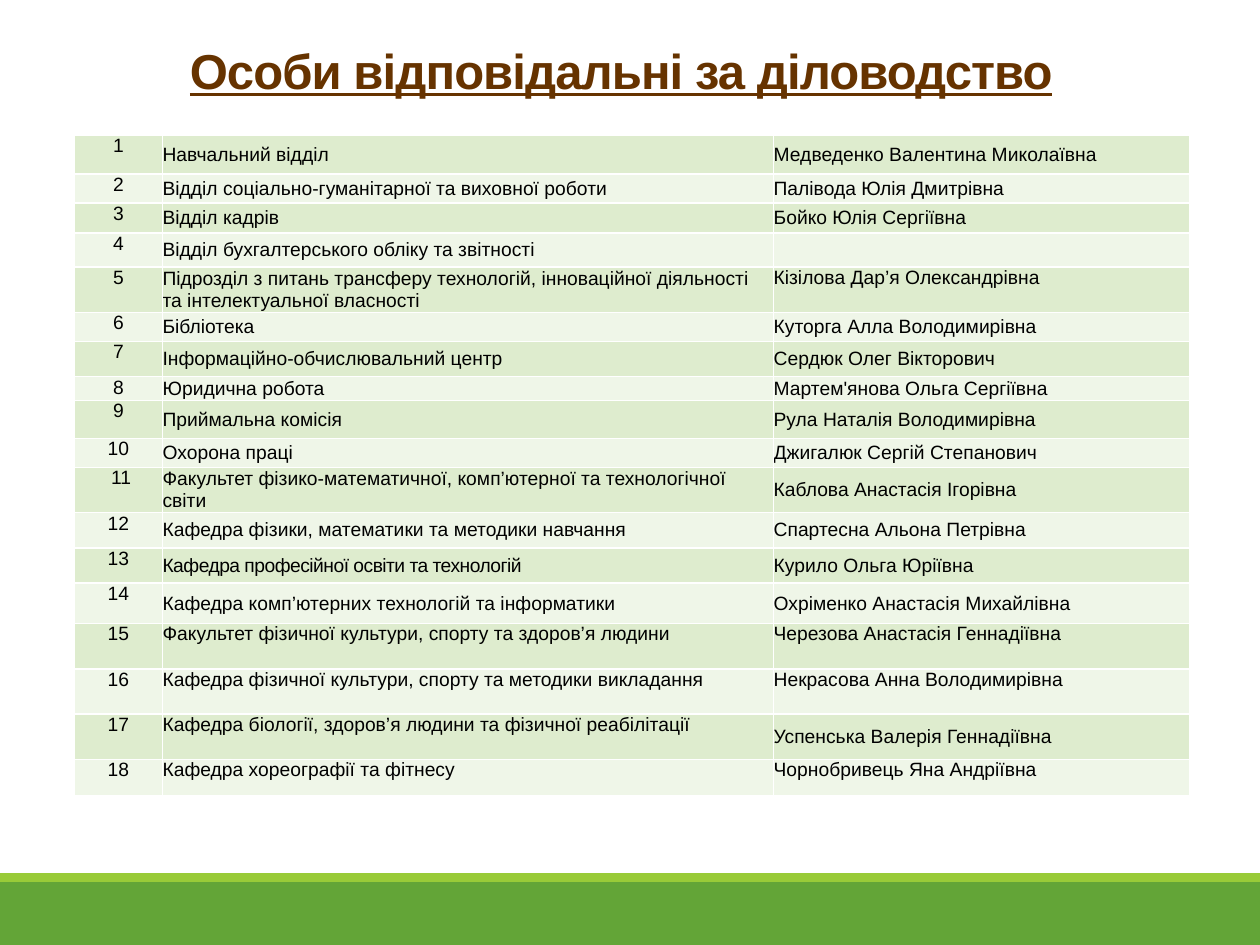
from dataclasses import dataclass

from pptx import Presentation
from pptx.dml.color import RGBColor
from pptx.enum.shapes import MSO_SHAPE
from pptx.enum.text import MSO_ANCHOR, MSO_AUTO_SIZE, PP_ALIGN
from pptx.util import Inches, Pt

TOP, MIDDLE = MSO_ANCHOR.TOP, MSO_ANCHOR.MIDDLE


@dataclass(frozen=True)
class Theme:
    """Colours, font and type sizes of the deck."""
    font: str = "Arial"
    title_size: float = 28
    cell_size: float = 11
    title: str = "663300"
    text: str = "000000"
    bands: tuple = ("DEECCE", "EFF6E8")
    footer: str = "63A537"
    footer_edge: str = "99CB38"


@dataclass(frozen=True)
class Person:
    """One table row: number, unit, person in charge and its layout."""
    number: str
    unit: str
    name: str
    height: float
    unit_anchor: MSO_ANCHOR = MIDDLE
    name_anchor: MSO_ANCHOR = MIDDLE
    unit_spacing: float = 0


class SlideBuilder:
    """Places styled elements on a grid of 100 columns by 75 rows."""

    def __init__(self, deck, theme):
        """Add a title-only slide to the deck."""
        self.theme = theme
        self.slide = deck.slides.add_slide(deck.slide_layouts[5])
        self.column = deck.slide_width / 100
        self.row = deck.slide_height / 75

    def area(self, left, top, width, height):
        """Turn grid units into lengths."""
        return (round(left * self.column), round(top * self.row),
                round(width * self.column), round(height * self.row))

    def style(self, span, size, colour, spacing=0):
        """Format one run."""
        span.font.name = self.theme.font
        span.font.size = Pt(size)
        span.font.color.rgb = RGBColor.from_string(colour)
        if spacing:
            span.font._element.set("spc", str(round(spacing * 100)))

    def bar(self, colour, *place):
        """Draw a plain filled bar."""
        box = self.slide.shapes.add_shape(MSO_SHAPE.RECTANGLE, *self.area(*place))
        box.shadow.inherit = False
        box.fill.solid()
        box.fill.fore_color.rgb = RGBColor.from_string(colour)
        box.line.fill.background()

    def title(self, text, *place):
        """Fill and move the title placeholder."""
        box = self.slide.shapes.title
        box.left, box.top, box.width, box.height = self.area(*place)
        frame = box.text_frame
        frame.text = text
        frame.auto_size = MSO_AUTO_SIZE.NONE
        frame.vertical_anchor = MSO_ANCHOR.BOTTOM
        para = frame.paragraphs[0]
        para.alignment = PP_ALIGN.CENTER
        para.line_spacing = 0.85
        span = para.runs[0]
        self.style(span, self.theme.title_size, self.theme.title, -0.5)
        span.font.bold = span.font.underline = True

    def cell(self, cell, text, band, anchor, align=PP_ALIGN.LEFT, spacing=0):
        """Fill and format one table cell."""
        cell.fill.solid()
        cell.fill.fore_color.rgb = RGBColor.from_string(band)
        cell.margin_left = cell.margin_right = cell.margin_top = cell.margin_bottom = 0
        cell.vertical_anchor = anchor
        cell.text_frame.text = text
        para = cell.text_frame.paragraphs[0]
        para.alignment = align
        para._p.get_or_add_endParaRPr().set("sz", str(self.theme.cell_size * 100))
        for span in para.runs:
            self.style(span, self.theme.cell_size, self.theme.text, spacing)

    def table(self, people, left, top, widths):
        """Draw the banded table of people."""
        height = sum(person.height for person in people)
        place = self.area(left, top, sum(widths), height)
        table = self.slide.shapes.add_table(len(people), len(widths), *place).table
        table.first_row = table.horz_banding = False
        for column, width in zip(table.columns, widths):
            column.width = round(width * self.column)
        for index, person in enumerate(people):
            table.rows[index].height = round(person.height * self.row)
            band = self.theme.bands[index % 2]
            number, unit, name = table.rows[index].cells
            self.cell(number, person.number, band, TOP, PP_ALIGN.CENTER)
            self.cell(unit, person.unit, band, person.unit_anchor,
                      spacing=person.unit_spacing)
            self.cell(name, person.name, band, person.name_anchor)


PEOPLE = [
    Person("1", "Навчальний відділ", "Медведенко Валентина Миколаївна", 3.1),
    Person("2", "Відділ соціально-гуманітарної та виховної роботи",
           "Палівода Юлія Дмитрівна", 2.3),
    Person("3", "Відділ кадрів", "Бойко Юлія Сергіївна", 2.4),
    Person("4", "Відділ бухгалтерського обліку та звітності", "", 2.7),
    Person("5", "Підрозділ з питань трансферу технологій, інноваційної діяльності "
           "та інтелектуальної власності", "Кізілова Дар’я Олександрівна", 3.6,
           name_anchor=TOP),
    Person("6", "Бібліотека", "Куторга Алла Володимирівна", 2.3),
    Person("7", "Інформаційно-обчислювальний центр", "Сердюк Олег Вікторович", 2.8),
    Person("8", "Юридична робота", "Мартем'янова Ольга Сергіївна", 1.9),
    Person("9", "Приймальна комісія", "Рула Наталія Володимирівна", 3),
    Person("10", "Охорона праці", "Джигалюк Сергій Степанович", 2.3),
    Person(" 11", "Факультет фізико-математичної, комп’ютерної та технологічної світи",
           "Каблова Анастасія Ігорівна", 3.6),
    Person("12", "Кафедра фізики, математики та методики навчання",
           "Спартесна Альона Петрівна", 2.8),
    Person("13", "Кафедра професійної освіти та технологій",
           "Курило Ольга Юріївна", 2.8, unit_spacing=-0.3),
    Person("14", "Кафедра комп’ютерних технологій та інформатики",
           "Охріменко Анастасія Михайлівна", 3.2),
    Person("15", "Факультет фізичної культури, спорту та здоров’я людини",
           "Черезова Анастасія Геннадіївна", 3.6, TOP, TOP),
    Person("16", "Кафедра фізичної культури, спорту та методики викладання",
           "Некрасова Анна Володимирівна", 3.6, TOP, TOP),
    Person("17", "Кафедра біології, здоров’я людини та фізичної реабілітації",
           "Успенська Валерія Геннадіївна", 3.6, TOP),
    Person("18", "Кафедра хореографії та фітнесу",
           "Чорнобривець Яна Андріївна", 2.9, TOP, TOP),
]


def main():
    """Build and save the deck."""
    deck = Presentation()
    deck.slide_width, deck.slide_height = Inches(10), Inches(7.5)
    theme = Theme()
    page = SlideBuilder(deck, theme)
    page.bar(theme.footer, 0, 70, 100, 5)
    page.bar(theme.footer_edge, 0, 69.3, 100, 0.7)
    page.title("Особи відповідальні за діловодство", 4.3, 2.9, 90, 5.5)
    page.table(PEOPLE, 5.9, 10.7, (7, 48.5, 33))
    deck.save("out.pptx")


if __name__ == "__main__":
    main()
